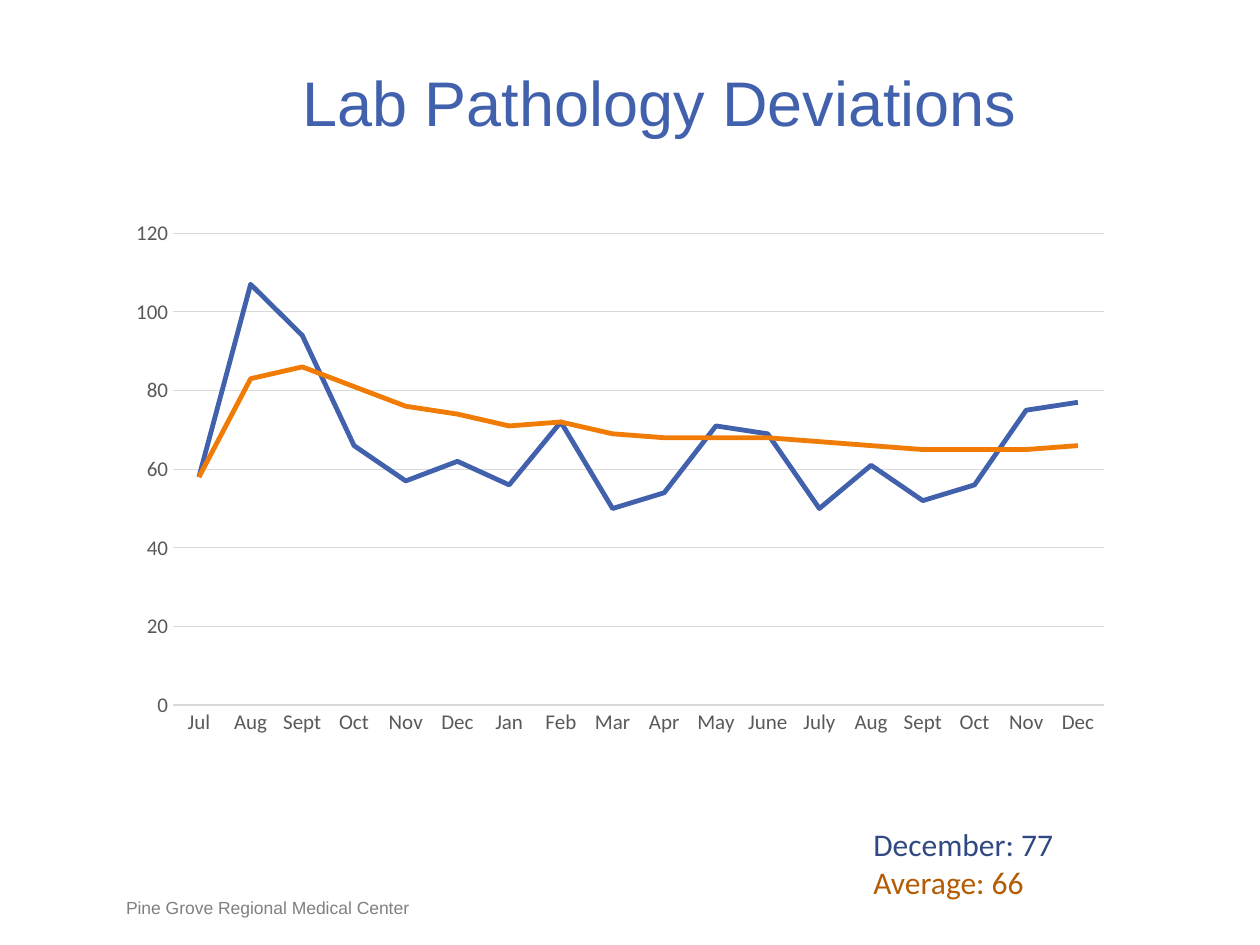
import pptx
import pptx.util
import pptx.chart.data
import pptx.enum.chart
import pptx.enum.text
from pptx.dml.color import RGBColor

BLUE = RGBColor(0x42, 0x61, 0xAD)
ORANGE = RGBColor(0xF0, 0x7B, 0x05)
NAVY = RGBColor(0x31, 0x49, 0x82)
BROWN = RGBColor(0xB4, 0x5C, 0x04)
GRAY = RGBColor(0x80, 0x80, 0x80)
DARK = RGBColor(0x59, 0x59, 0x59)
PALE = RGBColor(0xD9, 0xD9, 0xD9)
Pt = pptx.util.Pt
SCALE = 914400 / 126  # EMU per px


def box(*sizes):
    return [round(size * SCALE) for size in sizes]


def style(font, name, size, color):
    font.name = name
    font.size = Pt(size)
    font.color.rgb = color


deck = pptx.Presentation()
deck.slide_width, deck.slide_height = box(1260, 945)
slide = deck.slides.add_slide(deck.slide_layouts[5])

# Title
title = slide.shapes.title
title.left, title.top, title.width, title.height = box(124, 63, 1071, 77)
frame = title.text_frame
frame.text = "Lab Pathology Deviations"
frame.margin_left = frame.margin_right = frame.margin_top = frame.margin_bottom = 0
frame.vertical_anchor = pptx.enum.text.MSO_ANCHOR.TOP
frame.auto_size = pptx.enum.text.MSO_AUTO_SIZE.NONE
frame.paragraphs[0].alignment = pptx.enum.text.PP_ALIGN.CENTER
style(frame.paragraphs[0].font, "Arial", 36, BLUE)

# Footer
foot = slide.shapes.add_textbox(*box(126, 897, 400, 21)).text_frame
foot.word_wrap = True
foot.margin_left = foot.margin_right = foot.margin_top = foot.margin_bottom = 0
foot.vertical_anchor = pptx.enum.text.MSO_ANCHOR.BOTTOM
foot.text = "Pine Grove Regional Medical Center"
style(foot.paragraphs[0].font, "Arial", 10, GRAY)

# Latest month and average
note = slide.shapes.add_textbox(*box(861, 819, 252, 89)).text_frame
note.word_wrap = True
note.text = "December: 77\nAverage: 66"
for para, color in zip(note.paragraphs, (NAVY, BROWN)):
    style(para.font, "Calibri", 18, color)

# Monthly counts and running average
data = pptx.chart.data.CategoryChartData()
data.categories = ("Jul Aug Sept Oct Nov Dec Jan Feb Mar Apr May June "
                   "July Aug Sept Oct Nov Dec").split()
data.add_series("Series 1", (58, 107, 94, 66, 57, 62, 56, 72, 50,
                             54, 71, 69, 50, 61, 52, 56, 75, 77))
data.add_series("Series 2", (58, 83, 86, 81, 76, 74, 71, 72, 69,
                             68, 68, 68, 67, 66, 65, 65, 65, 66))
chart = slide.shapes.add_chart(
    pptx.enum.chart.XL_CHART_TYPE.LINE, *box(116, 210, 1008, 536), data).chart
chart.has_legend = False
chart.has_title = False
chart.font.name = "Calibri"
chart.font.size = Pt(10)
chart.plots[0].vary_by_categories = False
for line, color in zip(chart.plots[0].series, (BLUE, ORANGE)):
    line.smooth = False
    line.marker.style = pptx.enum.chart.XL_MARKER_STYLE.NONE
    line.format.line.width = Pt(2.75)
    line.format.line.color.rgb = color

# Axes
cats, vals = chart.category_axis, chart.value_axis
for axis in (cats, vals):
    axis.major_tick_mark = pptx.enum.chart.XL_TICK_MARK.NONE
    axis.minor_tick_mark = pptx.enum.chart.XL_TICK_MARK.NONE
    style(axis.tick_labels.font, "Calibri", 12, DARK)
cats.format.line.color.rgb = PALE
cats.format.line.width = Pt(1)
vals.format.line.fill.background()
vals.minimum_scale, vals.maximum_scale, vals.major_unit = 0, 120, 20
vals.has_major_gridlines = True
vals.major_gridlines.format.line.color.rgb = PALE
vals.major_gridlines.format.line.width = Pt(0.75)

deck.save("out.pptx")
